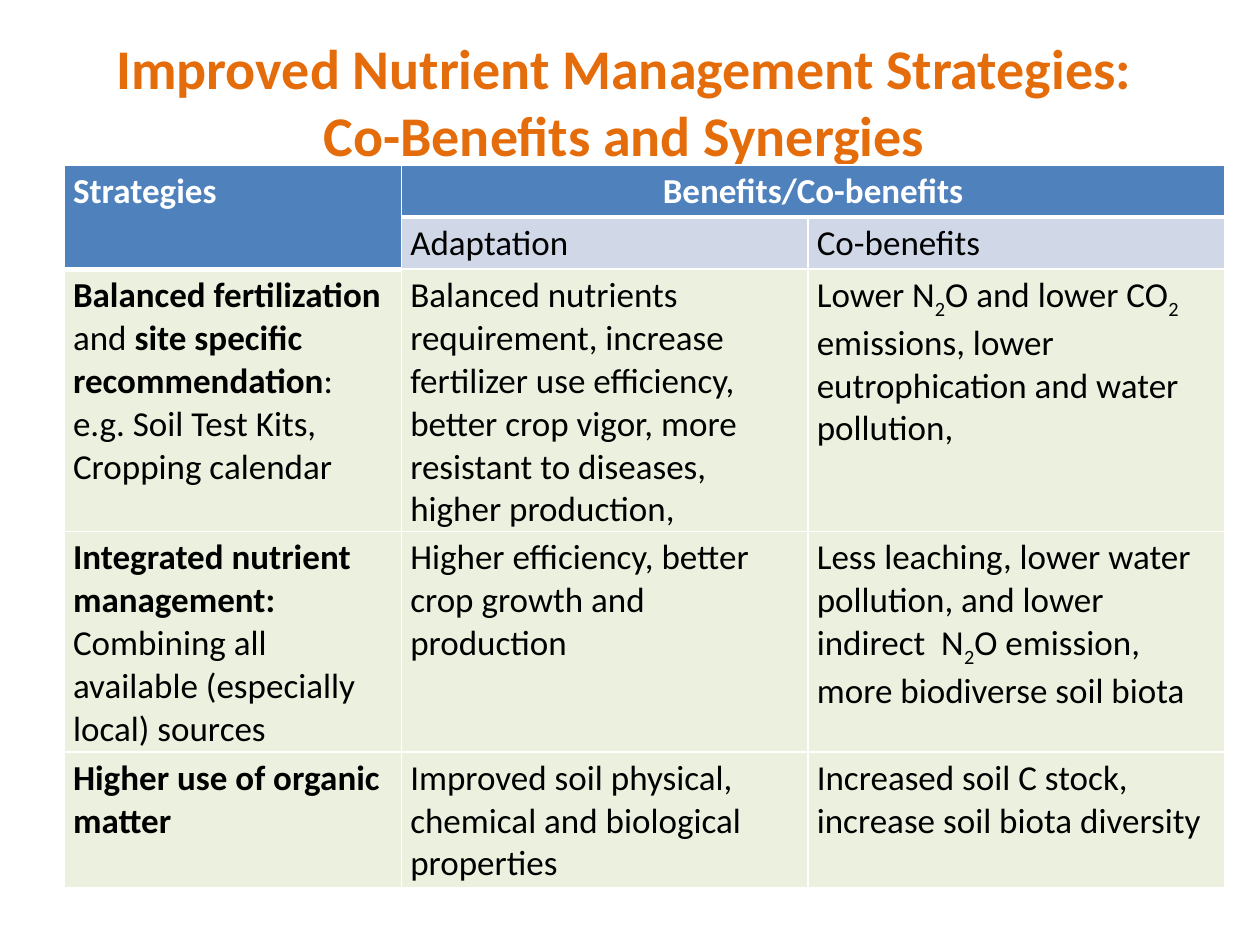
from dataclasses import dataclass

from lxml import etree
from pptx import Presentation
from pptx.dml.color import RGBColor
from pptx.enum.text import MSO_ANCHOR, PP_ALIGN
from pptx.oxml.ns import qn
from pptx.util import Inches, Pt

CENTER, LEFT = PP_ALIGN.CENTER, PP_ALIGN.LEFT
TOP, MIDDLE = MSO_ANCHOR.TOP, MSO_ANCHOR.MIDDLE
BOLD, SUBSCRIPT = "bold", "subscript"


@dataclass(frozen=True)
class Theme:
    font: str = "Calibri"
    title_size: int = 32
    table_size: int = 20
    title: str = "E46C0A"
    header: str = "4F81BD"
    subheader: str = "D0D8E8"
    body: str = "EBF1DE"
    light: str = "FFFFFF"
    dark: str = "000000"


THEME = Theme()
TITLE_LINES = ["Improved Nutrient Management Strategies: ", "Co-Benefits and Synergies "]
COLUMN_WIDTHS = [2.68, 3.23, 3.31]
ROW_HEIGHTS = [0.4, 0.4, 2.08, 1.75, 1.07]

# Each cell is a list of runs: (text, style)
HEADER_ROW = [[("Strategies", BOLD)], [("Benefits/Co-benefits", BOLD)], []]
SUBHEADER_ROW = [[], [("Adaptation", None)], [("Co-benefits", None)]]
STRATEGY_ROWS = [
    [
        [("Balanced fertilization ", BOLD), ("and ", None),
         ("site specific recommendation", BOLD),
         (": e.g. Soil Test Kits, Cropping calendar", None)],
        [("Balanced nutrients requirement, increase fertilizer use efficiency, "
          "better crop vigor, more resistant to diseases, higher production,", None)],
        [("Lower N", None), ("2", SUBSCRIPT), ("O and lower CO", None), ("2", SUBSCRIPT),
         (" emissions, lower eutrophication and water pollution,", None)],
    ],
    [
        [("Integrated nutrient management:", BOLD),
         (" Combining all available (especially local) sources", None)],
        [("Higher efficiency, better crop growth and production", None)],
        [("Less leaching, lower water pollution, and lower indirect  N", None),
         ("2", SUBSCRIPT), ("O emission, more biodiverse soil biota", None)],
    ],
    [
        [("Higher use of organic matter", BOLD)],
        [("Improved soil physical, chemical and biological properties", None)],
        [("Increased soil C stock, increase soil biota diversity", None)],
    ],
]


def add_run(paragraph, text, size, color, style=None):
    run = paragraph.add_run()
    run.text = text
    run.font.name = THEME.font
    run.font.size = Pt(size)
    run.font.bold = style == BOLD
    run.font.color.rgb = RGBColor.from_string(color)
    if style == SUBSCRIPT:
        run.font._element.set("baseline", "-25000")


def set_borders(cell, bottom_width):
    """Draw white cell borders; they must precede the fill in the cell XML."""
    properties = cell._tc.get_or_add_tcPr()
    widths = {"a:lnL": 1, "a:lnR": 1, "a:lnT": 1, "a:lnB": bottom_width}
    for position, (tag, width) in enumerate(widths.items()):
        line = etree.Element(qn(tag), w=str(Pt(width)))
        fill = etree.SubElement(line, qn("a:solidFill"))
        etree.SubElement(fill, qn("a:srgbClr"), val=THEME.light)
        properties.insert(position, line)


def fill_cell(cell, runs, fill, color, alignment=LEFT, bottom_width=1):
    cell.fill.solid()
    cell.fill.fore_color.rgb = RGBColor.from_string(fill)
    cell.margin_left = cell.margin_right = Inches(0.07)
    cell.margin_top = cell.margin_bottom = Inches(0.04)
    cell.vertical_anchor = TOP
    set_borders(cell, bottom_width)
    paragraph = cell.text_frame.paragraphs[0]
    paragraph.alignment = alignment
    for text, style in runs:
        add_run(paragraph, text, THEME.table_size, color, style)


def add_title(slide, left, top, width, height):
    frame = slide.shapes.add_textbox(left, top, width, height).text_frame
    frame.word_wrap = True
    frame.vertical_anchor = MIDDLE
    for index, line in enumerate(TITLE_LINES):
        paragraph = frame.add_paragraph() if index else frame.paragraphs[0]
        paragraph.alignment = CENTER
        add_run(paragraph, line, THEME.title_size, THEME.title, BOLD)


def add_strategy_table(slide, left, top, width, height):
    rows = [HEADER_ROW, SUBHEADER_ROW, *STRATEGY_ROWS]
    table = slide.shapes.add_table(
        len(rows), len(COLUMN_WIDTHS), left, top, width, height).table
    for column, share in zip(table.columns, COLUMN_WIDTHS):
        column.width = int(width * share / sum(COLUMN_WIDTHS))
    for row, share in zip(table.rows, ROW_HEIGHTS):
        row.height = int(height * share / sum(ROW_HEIGHTS))

    table.cell(0, 0).merge(table.cell(1, 0))
    table.cell(0, 1).merge(table.cell(0, 2))
    for row_index, row in enumerate(rows):
        for column_index, runs in enumerate(row):
            cell = table.cell(row_index, column_index)
            if row_index == 0 or (row_index == 1 and column_index == 0):
                alignment = CENTER if column_index else LEFT
                fill_cell(cell, runs, THEME.header, THEME.light, alignment, 3)
            else:
                fill = THEME.subheader if row_index == 1 else THEME.body
                fill_cell(cell, runs, fill, THEME.dark)


def main():
    presentation = Presentation()
    presentation.slide_width, presentation.slide_height = Inches(10), Inches(7.5)
    slide = presentation.slides.add_slide(presentation.slide_layouts[6])
    add_title(slide, Inches(-0.33), Inches(0.21), Inches(10.67), Inches(1.18))
    add_strategy_table(slide, Inches(0.51), Inches(1.31), Inches(9.21), Inches(5.7))
    presentation.save("out.pptx")


if __name__ == "__main__":
    main()
